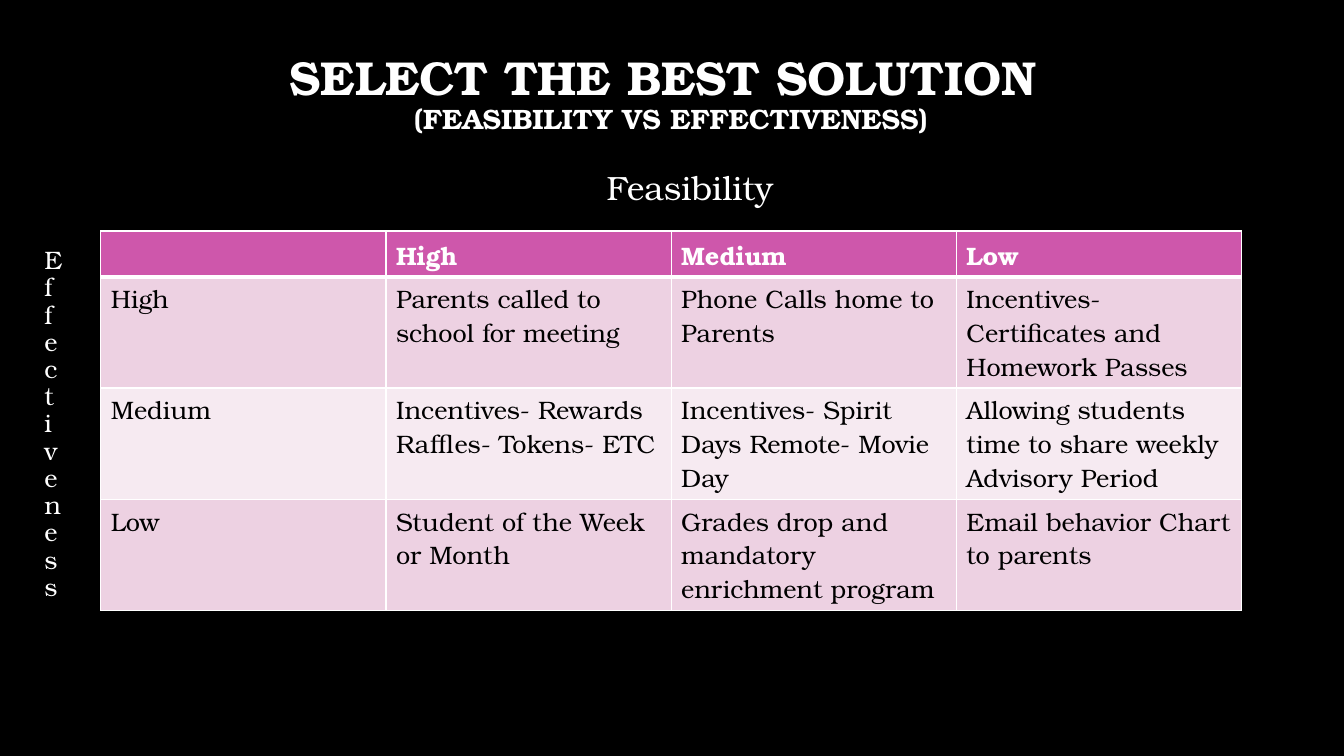
from dataclasses import dataclass

from lxml import etree
from pptx import Presentation
from pptx.dml.color import RGBColor
from pptx.enum.text import MSO_ANCHOR, PP_ALIGN
from pptx.oxml.ns import qn
from pptx.util import Cm, Pt

LEFT, CENTER = PP_ALIGN.LEFT, PP_ALIGN.CENTER
TOP, MIDDLE = MSO_ANCHOR.TOP, MSO_ANCHOR.MIDDLE


@dataclass(frozen=True)
class Theme:
    font: str = "TeX Gyre Bonum"
    background: str = "000000"
    light: str = "FFFFFF"
    dark: str = "000000"
    header: str = "CE57AB"
    bands: tuple[str, str] = ("EDD1E2", "F6EAF1")
    title_size: int = 34
    subtitle_size: int = 20
    axis_size: int = 24
    body_size: int = 18


@dataclass(frozen=True)
class Label:
    text: str
    left: float
    top: float
    width: float
    height: float
    size: int
    side_margin: float = 0.25


THEME = Theme()

AXIS_LABELS = [
    Label("Effectiveness", 1.12, 6.12, 0.18, 10.26, THEME.body_size, side_margin=0),
    Label("Feasibility", 15.04, 4.19, 7.54, 1.27, THEME.axis_size),
]

# A line break inside a cell starts a new paragraph
MATRIX = [
    ["", "High", "Medium", "Low"],
    ["High", "Parents called to school for meeting", "Phone Calls home to Parents",
     "Incentives- Certificates and Homework Passes"],
    ["Medium", "Incentives- Rewards\nRaffles- Tokens- ETC",
     "Incentives- Spirit Days Remote- Movie Day",
     "Allowing students time to share weekly Advisory Period"],
    ["Low", "Student of the Week or Month",
     "Grades drop and mandatory enrichment program",
     "Email behavior Chart to parents"],
]
TABLE_LEFT, TABLE_TOP, TABLE_WIDTH = 2.54, 5.82, 28.75
HEADER_HEIGHT, ROW_HEIGHT = 1.16, 2.8
THIN, THICK = 1, 3


def add_text(paragraph, text: str, *, size: int, color: str = THEME.light,
             bold: bool = False, align=LEFT, spacing: float = 1.0) -> None:
    """Append a formatted run to a paragraph."""
    paragraph.alignment = align
    paragraph.line_spacing = spacing
    run = paragraph.add_run()
    run.text = text
    run.font.name = THEME.font
    run.font.size = Pt(size)
    run.font.bold = bold
    run.font.color.rgb = RGBColor.from_string(color)


def add_frame(slide, left: float, top: float, width: float, height: float,
              anchor=TOP, side_margin: float = 0.25):
    """Add a wrapping text box and return its text frame."""
    shape = slide.shapes.add_textbox(Cm(left), Cm(top), Cm(width), Cm(height))
    frame = shape.text_frame
    frame.word_wrap = True
    frame.vertical_anchor = anchor
    frame.margin_left = frame.margin_right = Cm(side_margin)
    return frame


def set_borders(cell, widths: dict[str, int]) -> None:
    """Draw solid cell borders, with widths in points."""
    properties = cell._tc.get_or_add_tcPr()
    for side, width in widths.items():
        line = etree.SubElement(properties, qn(f"a:ln{side}"), w=str(Pt(width)))
        fill = etree.SubElement(line, qn("a:solidFill"))
        etree.SubElement(fill, qn("a:srgbClr"), val=THEME.light)


def add_title(slide) -> None:
    frame = add_frame(slide, 2.54, 0.97, 28.75, 2.84, anchor=MIDDLE)
    paragraph = frame.paragraphs[0]
    style = {"bold": True, "align": CENTER, "spacing": 0.9}
    add_text(paragraph, "SELECT THE BEST SOLUTION ", size=THEME.title_size, **style)
    paragraph.add_line_break()
    add_text(paragraph, "(FEASIBILITY VS EFFECTIVENESS)", size=THEME.subtitle_size, **style)


def add_matrix(slide) -> None:
    row_count, column_count = len(MATRIX), len(MATRIX[0])
    height = HEADER_HEIGHT + ROW_HEIGHT * (row_count - 1)
    table = slide.shapes.add_table(row_count, column_count, Cm(TABLE_LEFT), Cm(TABLE_TOP),
                                   Cm(TABLE_WIDTH), Cm(height)).table
    for column in table.columns:
        column.width = Cm(TABLE_WIDTH / column_count)

    for row_index, texts in enumerate(MATRIX):
        is_header = row_index == 0
        table.rows[row_index].height = Cm(HEADER_HEIGHT if is_header else ROW_HEIGHT)
        fill = THEME.header if is_header else THEME.bands[(row_index - 1) % 2]
        borders = {"L": THIN, "R": THIN,
                   "T": THICK if row_index == 1 else THIN,
                   "B": THICK if is_header else THIN}
        for column_index, text in enumerate(texts):
            cell = table.cell(row_index, column_index)
            set_borders(cell, borders)
            cell.fill.solid()
            cell.fill.fore_color.rgb = RGBColor.from_string(fill)
            if not text:
                continue
            for line_index, line in enumerate(text.split("\n")):
                frame = cell.text_frame
                paragraph = frame.add_paragraph() if line_index else frame.paragraphs[0]
                add_text(paragraph, line, size=THEME.body_size, bold=is_header,
                         color=THEME.light if is_header else THEME.dark)


def add_axis_label(slide, label: Label) -> None:
    frame = add_frame(slide, label.left, label.top, label.width, label.height,
                      side_margin=label.side_margin)
    add_text(frame.paragraphs[0], label.text, size=label.size, spacing=0.9)


def main() -> None:
    presentation = Presentation()
    presentation.slide_width, presentation.slide_height = Cm(33.87), Cm(19.05)
    slide = presentation.slides.add_slide(presentation.slide_layouts[6])

    # Background
    slide.background.fill.solid()
    slide.background.fill.fore_color.rgb = RGBColor.from_string(THEME.background)

    # Title, decision matrix and axis names
    add_title(slide)
    add_matrix(slide)
    for label in AXIS_LABELS:
        add_axis_label(slide, label)

    presentation.save("out.pptx")


if __name__ == "__main__":
    main()
